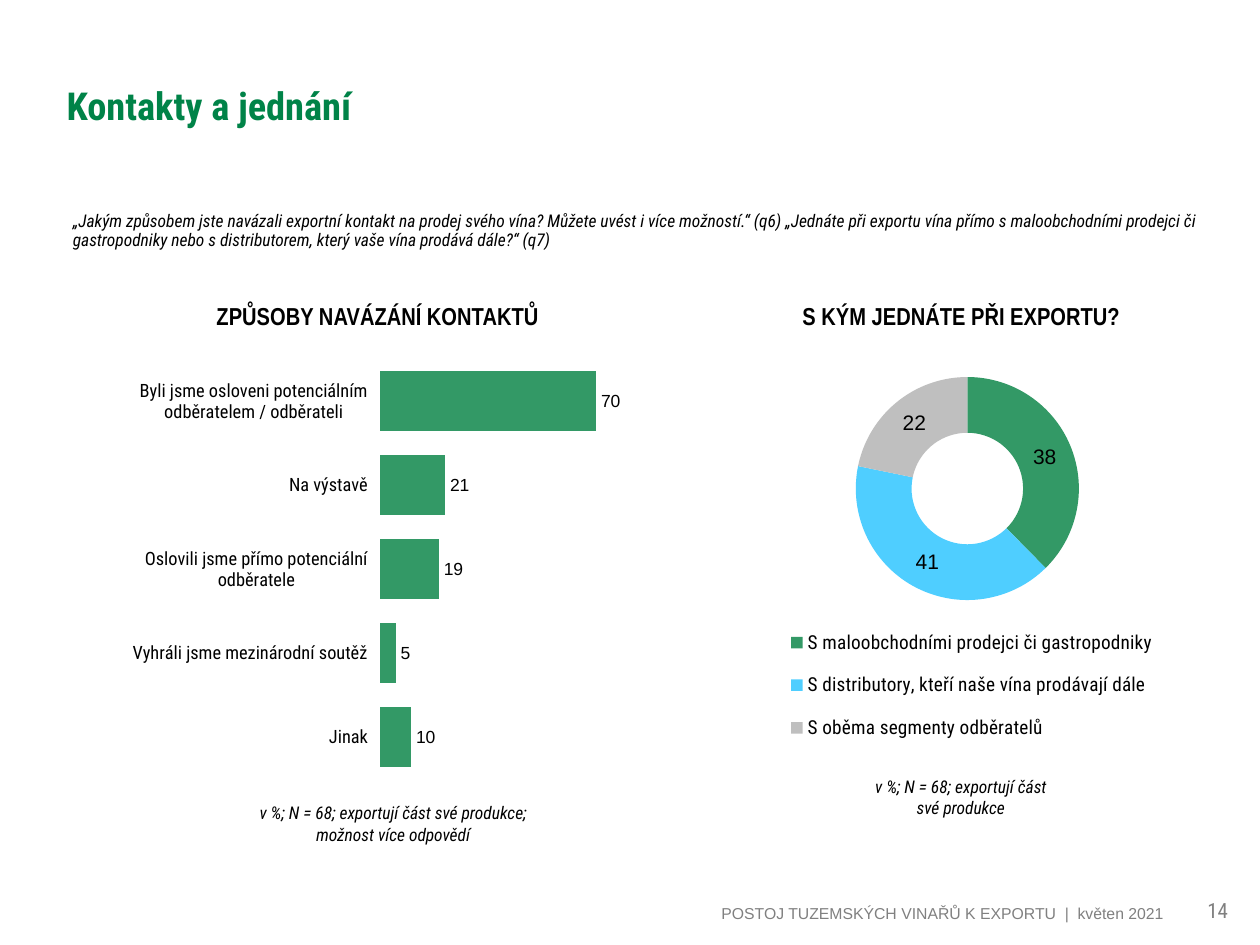
from dataclasses import dataclass

from lxml import etree
from pptx import Presentation
from pptx.chart.chart import Chart
from pptx.chart.data import CategoryChartData
from pptx.dml.color import RGBColor
from pptx.enum.chart import XL_CHART_TYPE, XL_LABEL_POSITION, XL_LEGEND_POSITION, XL_TICK_MARK
from pptx.enum.text import MSO_ANCHOR, PP_ALIGN
from pptx.oxml.ns import qn
from pptx.util import Emu, Inches, Pt

BAR, RING = XL_CHART_TYPE.BAR_CLUSTERED, XL_CHART_TYPE.DOUGHNUT
OUTER, RIGHT_KEY = XL_LABEL_POSITION.OUTSIDE_END, XL_LEGEND_POSITION.RIGHT
TICK_OUT = XL_TICK_MARK.OUTSIDE
TOP, MIDDLE, BOTTOM = MSO_ANCHOR.TOP, MSO_ANCHOR.MIDDLE, MSO_ANCHOR.BOTTOM
LEFT, CENTER, RIGHT = PP_ALIGN.LEFT, PP_ALIGN.CENTER, PP_ALIGN.RIGHT

BLACK = RGBColor(0x00, 0x00, 0x00)
GRAY = RGBColor(0x80, 0x80, 0x80)
DEEP = RGBColor(0x00, 0x83, 0x48)
GREEN = RGBColor(0x33, 0x99, 0x66)
BLUE = RGBColor(0x4F, 0xCE, 0xFF)
SILVER = RGBColor(0xBF, 0xBF, 0xBF)
ROBOTO, ARIAL, NARROW = "Roboto Condensed", "Arial", "Arial Narrow"

# The slide is a grid of 100 columns by 75 rows
COLS, ROWS = 100, 75
WIDE, HIGH = Inches(10), Inches(7.5)


@dataclass
class Box:
    col: float
    row: float
    cols: float
    rows: float

    def place(self) -> list[Emu]:
        return [Emu(round(WIDE * self.col / COLS)), Emu(round(HIGH * self.row / ROWS)),
                Emu(round(WIDE * self.cols / COLS)), Emu(round(HIGH * self.rows / ROWS))]


@dataclass
class Panel:
    title: str
    head: Box
    note: str
    foot: Box


def style(font, size: float, face: str = ROBOTO, color: RGBColor = BLACK,
          bold: bool = False, italic: bool = False) -> None:
    font.size, font.name, font.bold, font.italic = Pt(size), face, bold, italic
    font.color.rgb = color


def add_text(slide, box: Box, text: str, size: float, align=LEFT, anchor=TOP,
             wrap: bool = True, space: float = 1.0, **look) -> None:
    frame = slide.shapes.add_textbox(*box.place()).text_frame
    frame.word_wrap, frame.vertical_anchor = wrap, anchor
    para = frame.paragraphs[0]
    para.alignment, para.line_spacing = align, space
    run = para.add_run()
    run.text = text
    style(run.font, size, **look)


def set_layout(parent, index: int, share: Box, inner: bool = False) -> None:
    """Fix a chart part at shares of the chart's own size."""
    for old in parent.findall(qn("c:layout")):
        parent.remove(old)
    layout = etree.Element(qn("c:layout"))
    manual = etree.SubElement(layout, qn("c:manualLayout"))
    rules = [("layoutTarget", "inner")] if inner else []
    rules += [("xMode", "edge"), ("yMode", "edge"), ("x", share.col),
              ("y", share.row), ("w", share.cols), ("h", share.rows)]
    for tag, value in rules:
        etree.SubElement(manual, qn(f"c:{tag}")).set("val", str(value))
    parent.insert(index, layout)


def add_chart(slide, kind, box: Box, plot: Box, data: dict[str, int],
              size: float, form: str) -> Chart:
    source = CategoryChartData()
    source.categories = list(data)
    source.add_series("Series 1", list(data.values()))
    chart = slide.shapes.add_chart(kind, *box.place(), source).chart
    chart.has_title = chart.has_legend = False
    style(chart.font, size, ARIAL)
    body = chart.plots[0]
    body.has_data_labels = True
    labels = body.data_labels
    labels.show_value = True
    labels.number_format, labels.number_format_is_linked = form, False
    style(labels.font, size, ARIAL)
    set_layout(chart.element.find(".//" + qn("c:plotArea")), 0, plot, inner=True)
    return chart


def add_bars(slide, box: Box, plot: Box, data: dict[str, int]) -> None:
    chart = add_chart(slide, BAR, box, plot, data, 10, "0")
    body = chart.plots[0]
    body.gap_width, body.vary_by_categories = 40, False
    body.data_labels.position = OUTER
    fill = body.series[0].format.fill
    fill.solid()
    fill.fore_color.rgb = GREEN
    names, scale = chart.category_axis, chart.value_axis
    names.reverse_order, names.major_tick_mark = True, TICK_OUT
    names.format.line.fill.background()
    style(names.tick_labels.font, 10.5)
    scale.minimum_scale, scale.maximum_scale, scale.major_unit = 0, 80, 20
    scale.has_major_gridlines = scale.visible = False


def add_ring(slide, box: Box, plot: Box, key: Box, data: dict[str, int],
             colors: list[RGBColor]) -> None:
    chart = add_chart(slide, RING, box, plot, data, 12, "#,##0")
    for index, color in enumerate(colors):
        part = chart.plots[0].series[0].points[index].format
        part.fill.solid()
        part.fill.fore_color.rgb = color
        part.line.fill.background()
    chart.has_legend = True
    legend = chart.legend
    legend.position, legend.include_in_layout = RIGHT_KEY, False
    style(legend.font, 11)
    set_layout(chart.element.find(".//" + qn("c:legend")), 1, key)


WAYS = {
    "Byli jsme osloveni potenciálním odběratelem / odběrateli": 70,
    "Na výstavě": 21,
    "Oslovili jsme přímo potenciální odběratele": 19,
    "Vyhráli jsme mezinárodní soutěž": 5,
    "Jinak": 10,
}
SIDES = {
    "S maloobchodními prodejci či gastropodniky": 38,
    "S distributory, kteří naše vína prodávají dále": 41,
    "S oběma segmenty odběratelů": 22,
}
PANELS = [
    Panel("ZPŮSOBY NAVÁZÁNÍ KONTAKTŮ", Box(16.2, 23.4, 27.7, 3.4),
          "v %; N = 68; exportují část své produkce; možnost více odpovědí",
          Box(17.9, 63.2, 26.6, 4.4)),
    Panel("S KÝM JEDNÁTE PŘI EXPORTU?", Box(62.7, 23.4, 27.4, 3.4),
          "v %; N = 68; exportují část své produkce", Box(68, 61.1, 16.5, 4.4)),
]
QUESTION = ("„Jakým způsobem jste navázali exportní kontakt na prodej svého vína? "
            "Můžete uvést i více možností.“ (q6) „Jednáte při exportu vína přímo "
            "s maloobchodními prodejci či gastropodniky nebo s distributorem, "
            "který vaše vína prodává dále?“ (q7)")


def main() -> None:
    deck = Presentation()
    deck.slide_width, deck.slide_height = WIDE, HIGH
    slide = deck.slides.add_slide(deck.slide_layouts[6])

    # Footer
    add_text(slide, Box(4.9, 69.8, 88.4, 3.9),
             "POSTOJ TUZEMSKÝCH VINAŘŮ K EXPORTU  |  květen 2021", 9,
             align=RIGHT, anchor=BOTTOM, face=ARIAL, color=GRAY)
    add_text(slide, Box(93.3, 69.8, 6.7, 3.9), "14", 12,
             align=CENTER, anchor=BOTTOM, color=GRAY)

    # Charts
    add_ring(slide, Box(56.4, 23.4, 71.5, 46.6), Box(0.16, 0.14, 0.25, 0.38),
             Box(0.07, 0.54, 0.44, 0.25), SIDES, [GREEN, BLUE, SILVER])
    add_bars(slide, Box(6.1, 26.7, 50.2, 36.6), Box(0.48, 0.05, 0.39, 0.91), WAYS)

    # Title and survey question
    add_text(slide, Box(4.3, 2.1, 71.7, 12.5), "Kontakty a jednání", 22,
             anchor=MIDDLE, color=DEEP, bold=True)
    add_text(slide, Box(4.8, 16.4, 92.9, 4), QUESTION, 10, space=0.9, italic=True)

    # Heading and base note of each chart
    for panel in PANELS:
        add_text(slide, panel.head, panel.title, 14, wrap=False, face=NARROW, bold=True)
        add_text(slide, panel.foot, panel.note, 10, align=CENTER, italic=True)

    deck.save("out.pptx")


if __name__ == "__main__":
    main()
